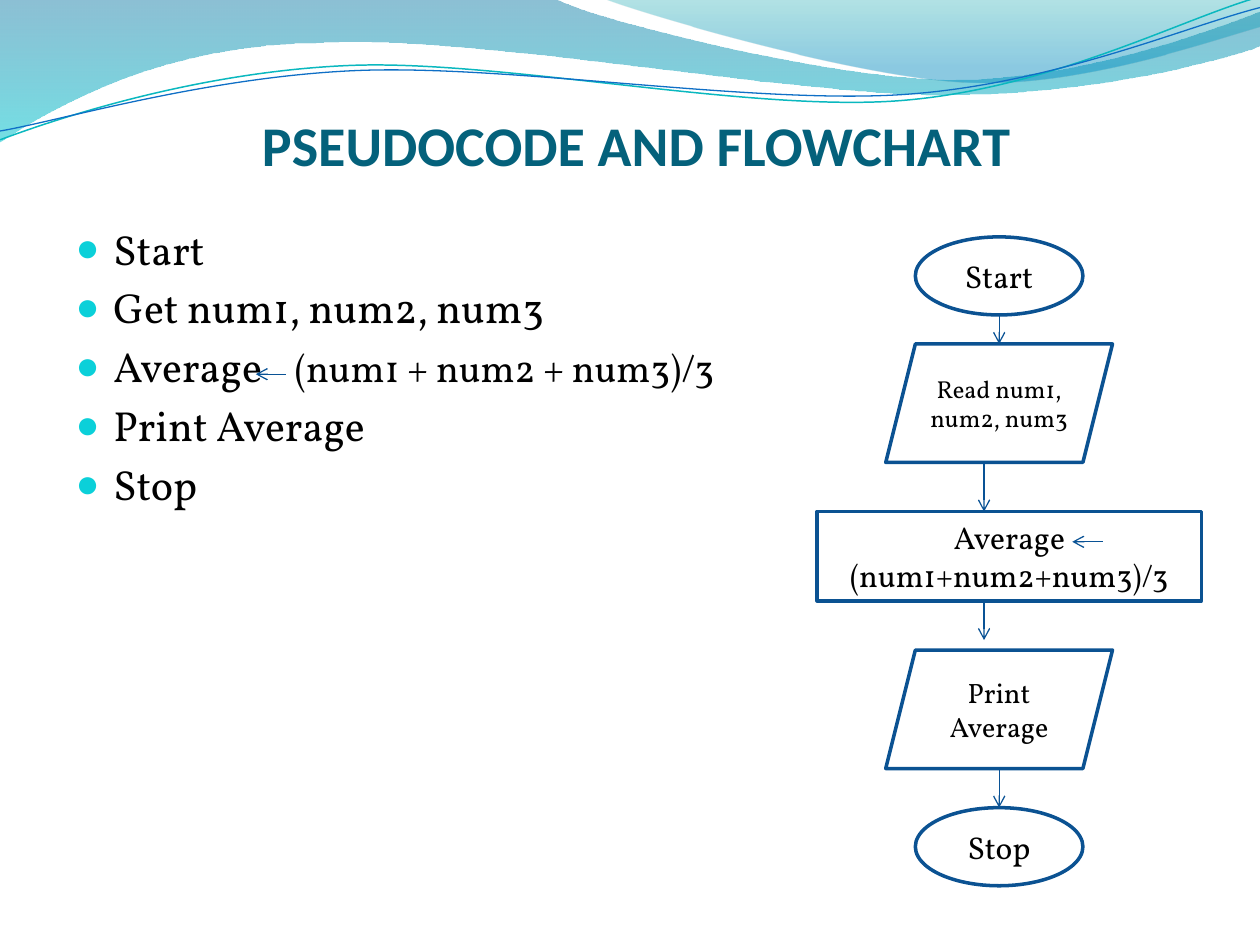
import math

from lxml import etree
from pptx import Presentation
from pptx import util as u
from pptx.dml.color import RGBColor
from pptx.enum import shapes, text
from pptx.oxml import ns

TEAL = RGBColor(0x04, 0x61, 0x7B)
CYAN = RGBColor(0x0B, 0xD0, 0xD9)
OUTLINE = RGBColor(0x0B, 0x52, 0x92)
ARROW = RGBColor(0x09, 0x52, 0x95)
BLACK = RGBColor(0, 0, 0)
BAND_TOP, BAND_END = RGBColor(0, 0x74, 0xA1), RGBColor(0, 0xC6, 0xCF)
CREST_TOP, CREST_END = RGBColor(0, 0xA1, 0xA9), RGBColor(0, 0x8B, 0xBF)
LINE_TEAL, LINE_BLUE = RGBColor(0x0A, 0xB8, 0xBF), RGBColor(0x0F, 0x6F, 0xC6)
HEADING_FONT, BODY_FONT = "Calibri", "Vollkorn"

HEADING = "PSEUDOCODE AND FLOWCHART"
PSEUDOCODE = [
    [("Start", 24)],
    [("Get num1, num2, num3", 24)],
    [("Average", 24), (" ", 24), ("(num1 + num2 + num3)/3", 22)],
    [("Print Average", 24)],
    [("Stop", 24)],
]
ASSIGN_GAP = 14

KIND = shapes.MSO_SHAPE
OVAL, SLANT = (KIND.OVAL, 1.33, 0.62), (KIND.PARALLELOGRAM, 1.8, 0.94)
BOX = (KIND.RECTANGLE, 3.05, 0.71)
AXIS, SIDE_AXIS = 7.93, 7.81
# label, size, form, centre, top, arrow axis, arrow length
FLOW = [
    ("Start", 18, OVAL, AXIS, 1.88, AXIS, 0.23),
    ("Read num1, num2, num3", 14, SLANT, AXIS, 2.73, SIDE_AXIS, 0.39),
    ("Average (num1+num2+num3)/3", 18, BOX, 8.01, 4.06, SIDE_AXIS, 0.31),
    ("Print Average", 16, SLANT, AXIS, 5.16, AXIS, 0.31),
    ("Stop", 18, OVAL, AXIS, 6.41, AXIS, 0),
]
ASSIGN_ARROWS = [(2.27, 2.97), (8.75, 4.3)]
ASSIGN_LENGTH = 0.24

# a pair is a straight step, six numbers are a cubic curve
BANDS = [
    ([(0, -0.01), (4.4, -0.01), (4.76, 0.17, 6.64, 0.63, 7.58, 0.63),
      (8.53, 0.63, 9.58, 0.26, 10, 0.09), (10.01, 0.36),
      (9.83, 0.44, 8.7, 0.76, 7.46, 0.75), (6.22, 0.75, 3.82, 0.28, 2.57, 0.34),
      (1.29, 0.35, 0.46, 0.83, -0.01, 1.13)],
     [(0, BAND_TOP, 45), (1, BAND_END, 55)]),
    ([(4.79, -0.01), (5.09, 0.11, 6.82, 0.62, 7.69, 0.65),
      (8.56, 0.69, 9.61, 0.32, 10, 0.21), (10, 0)],
     [(0, CREST_TOP, 30), (0.8, CREST_END, 45)]),
]
RIPPLES = [
    ([(0, 1.11), (0.48, 0.93, 1.58, 0.57, 2.77, 0.52),
      (3.95, 0.47, 5.93, 0.89, 7.13, 0.8), (8.33, 0.71, 9.38, 0.15, 9.98, -0.02)],
     LINE_TEAL, 0.85),
    ([(0, 1.04), (0.47, 0.96, 1.64, 0.61, 2.83, 0.56),
      (4.03, 0.51, 5.97, 0.83, 7.17, 0.75), (8.36, 0.67, 9.41, 0.21, 10, 0.06)],
     LINE_BLUE, 0.75),
]
TILT = -2.7
TILT_CENTRE = (4.99, 0.58)


def sub(parent, tag, **attributes):
    return etree.SubElement(parent, ns.qn(tag), attributes)


def place(shape, *box):
    shape.left, shape.top, shape.width, shape.height = map(u.Inches, box)


def style(run, size, font, color, bold=False):
    run.font.size, run.font.name, run.font.bold = u.Pt(size), font, bold
    run.font.color.rgb = color


def level(step):
    cos, sin = math.cos(math.radians(-TILT)), math.sin(math.radians(-TILT))
    cx, cy = TILT_CENTRE
    turned = []
    for x, y in zip(step[::2], step[1::2]):
        dx, dy = x - cx, y - cy
        turned += [cx + dx * cos - dy * sin, cy + dx * sin + dy * cos]
    return turned


def add_wave(slide, steps, closed):
    first, *rest = [[u.Inches(value) for value in step] for step in steps]
    builder = slide.shapes.build_freeform(*first)
    builder.add_line_segments([step[-2:] for step in rest], close=closed)
    wave = builder.convert_to_shape()
    wave.shadow.inherit = False
    segments = list(wave._element.iter(ns.qn("a:lnTo")))
    for segment, step in zip(segments, rest):
        if len(step) == 6:
            curve = etree.Element(ns.qn("a:cubicBezTo"))
            for x, y in zip(step[::2], step[1::2]):
                sub(curve, "a:pt", x=str(x - wave.left), y=str(y - wave.top))
            segment.getparent().replace(segment, curve)
    return wave


def add_waves(slide):
    for steps, stops in BANDS:
        band = add_wave(slide, steps, True)
        band.line.fill.background()
        band.fill.gradient()
        band.fill.gradient_angle = 270
        for stop, (position, color, alpha) in zip(band.fill.gradient_stops, stops):
            stop.position = position
            stop.color.rgb = color
            tint = stop._gs.find(ns.qn("a:srgbClr"))
            sub(tint, "a:alpha", val=str(alpha * 1000))
    for steps, color, width in RIPPLES:
        ripple = add_wave(slide, [level(step) for step in steps], False)
        ripple.rotation = TILT
        ripple.fill.background()
        ripple.line.color.rgb, ripple.line.width = color, u.Pt(width)


def add_arrow(slide, x, y, dx, dy):
    arrow = slide.shapes.add_connector(
        shapes.MSO_CONNECTOR.STRAIGHT, *map(u.Inches, (x, y, x + dx, y + dy)))
    arrow.line.color.rgb, arrow.line.width = ARROW, u.Pt(0.75)
    sub(arrow.line._get_or_add_ln(), "a:tailEnd", type="arrow")
    sub(arrow._element.spPr, "a:effectLst")


def fill_heading(heading):
    place(heading, 0.55, 0.47, 9, 0.94)
    frame = heading.text_frame
    frame.text = HEADING
    frame.auto_size = text.MSO_AUTO_SIZE.NONE
    frame.vertical_anchor = text.MSO_ANCHOR.BOTTOM
    frame.margin_left = frame.margin_right = frame.margin_bottom = 0
    frame.paragraphs[0].alignment = text.PP_ALIGN.CENTER
    style(frame.paragraphs[0].runs[0], 32, HEADING_FONT, TEAL, True)


def fill_pseudocode(body):
    place(body, 0.5, 1.72, 9, 5.2)
    frame = body.text_frame
    frame.auto_size = text.MSO_AUTO_SIZE.NONE
    for i, pieces in enumerate(PSEUDOCODE):
        line = frame.add_paragraph() if i else frame.paragraphs[0]
        for words, size in pieces:
            run = line.add_run()
            run.text = words
            style(run, size, BODY_FONT, BLACK)
            if words == " ":
                run.font._element.set("spc", str(ASSIGN_GAP * 100))
        props = line._p.get_or_add_pPr()
        props.set("marL", str(u.Inches(0.3)))
        props.set("indent", str(-u.Inches(0.3)))
        sub(sub(props, "a:buClr"), "a:srgbClr", val=str(CYAN))
        sub(props, "a:buSzPct", val="95000")
        sub(props, "a:buChar", char="●")


def add_flow(slide):
    for label, size, (kind, width, height), centre, top, axis, length in FLOW:
        step = slide.shapes.add_shape(
            kind, *map(u.Inches, (centre - width / 2, top, width, height)))
        step.shadow.inherit = False
        step.fill.background()
        step.line.color.rgb, step.line.width = OUTLINE, u.Pt(2)
        frame = step.text_frame
        frame.text = label
        frame.word_wrap = True
        frame.vertical_anchor = text.MSO_ANCHOR.MIDDLE
        frame.paragraphs[0].alignment = text.PP_ALIGN.CENTER
        style(frame.paragraphs[0].runs[0], size, BODY_FONT, BLACK)
        if length:
            add_arrow(slide, axis, top + height, 0, length)
    for x, y in ASSIGN_ARROWS:
        add_arrow(slide, x, y, -ASSIGN_LENGTH, 0)


def main():
    deck = Presentation()
    deck.slide_width, deck.slide_height = u.Inches(10), u.Inches(7.5)
    slide = deck.slides.add_slide(deck.slide_layouts[1])
    heading, body = slide.placeholders
    add_waves(slide)
    for holder in (heading, body):
        slide.shapes._spTree.append(holder._element)
    fill_heading(heading)
    fill_pseudocode(body)
    add_flow(slide)
    deck.save("out.pptx")


if __name__ == "__main__":
    main()
